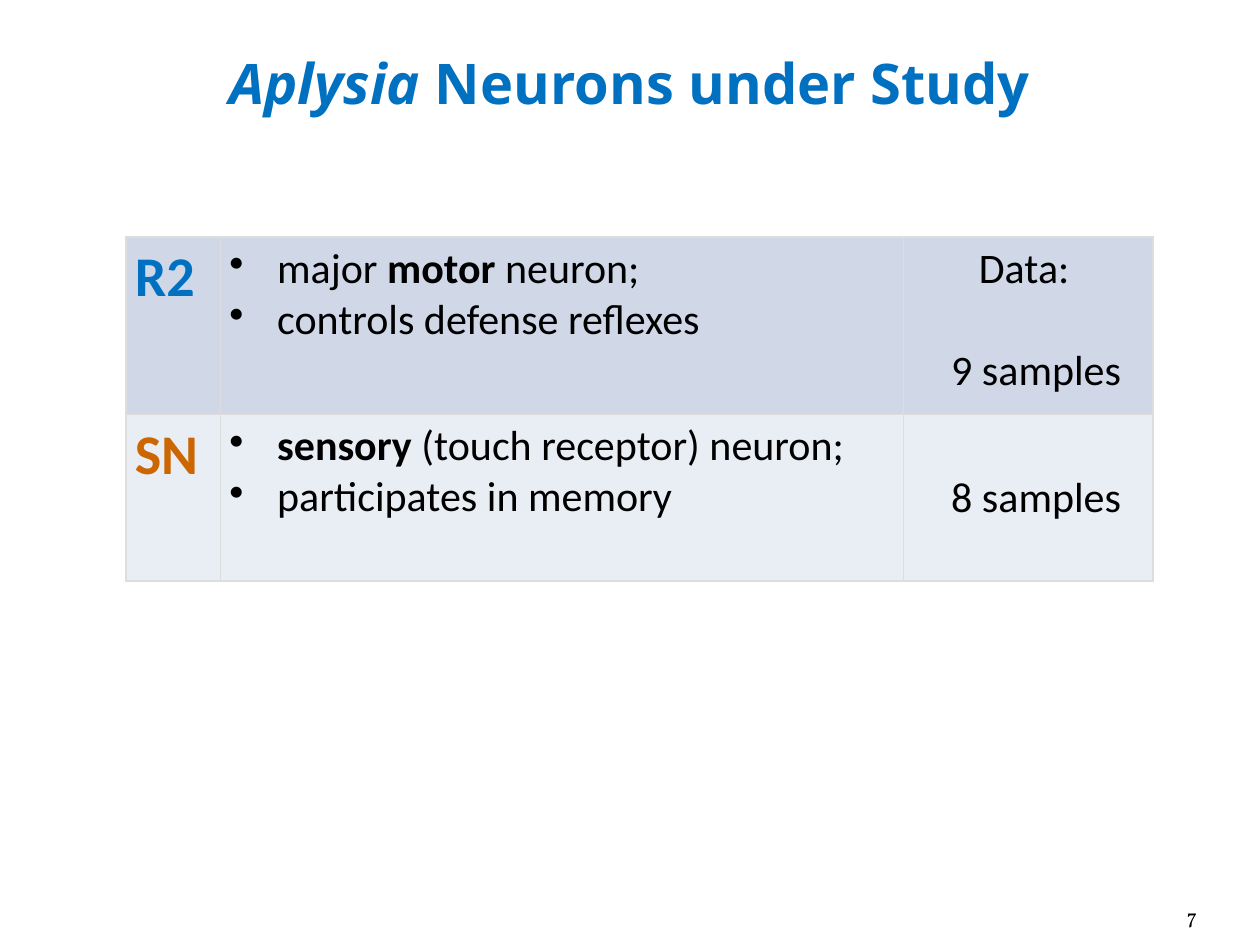
from dataclasses import dataclass

from lxml.etree import SubElement
from pptx import Presentation
from pptx.dml.color import RGBColor
from pptx.enum.text import MSO_ANCHOR as Anchor, PP_ALIGN as Align
from pptx.oxml.ns import qn
from pptx.util import Inches, Pt

BLUE, ORANGE, BLACK, BORDER = "0070C0", "CC6600", "000000", "DDDDDD"
LINE_HEIGHT = 0.41  # one line of 24 pt Calibri, in inches
HANGING = 0.38


@dataclass
class Span:
    text: str
    bold: bool = False
    italic: bool = False


@dataclass
class Line:
    spans: list[Span]
    indent: float = 0
    bullet: bool = False
    space_before: float = 0


@dataclass
class Neuron:
    name: str
    color: str
    fill: str
    height: float
    facts: list[Line]
    data: list[Line]
    data_top: float = 0.05


NEURONS = [
    Neuron("R2", BLUE, "D0D8E8", 1.41,
           [Line([Span("major "), Span("motor", bold=True), Span(" neuron;")], HANGING, True),
            Line([Span("controls defense reflexes")], HANGING, True)],
           [Line([Span("Data:")], 0.53),
            Line([Span("9 samples")], 0.31, space_before=LINE_HEIGHT)]),
    Neuron("SN", ORANGE, "E9EDF4", 1.32,
           [Line([Span("sensory", bold=True), Span(" (touch receptor) neuron;")], HANGING, True),
            Line([Span("participates in memory")], HANGING, True)],
           [Line([Span("8 samples")], 0.31)],
           data_top=0.05 + LINE_HEIGHT),
]
COLUMN_WIDTHS = [0.75, 5.42, 1.98]


def rgb(value: str) -> RGBColor:
    return RGBColor.from_string(value)


def write(frame, lines: list[Line], font: str, size: float, color: str, align=Align.LEFT) -> None:
    """Fill a text frame with lines in one font, size and colour."""
    for number, line in enumerate(lines):
        para = frame.add_paragraph() if number else frame.paragraphs[0]
        para.alignment = align
        para.font.name, para.font.size = font, Pt(size)
        para.font.color.rgb = rgb(color)
        if line.space_before:
            para.space_before = Inches(line.space_before)
        properties = para._p.get_or_add_pPr()
        if line.indent:
            properties.set("marL", str(Inches(line.indent)))
        if line.bullet:
            properties.set("indent", str(-Inches(line.indent)))
            bullet = SubElement(properties, qn("a:buChar"), char="•")
            properties.remove(bullet)
            properties.insert_element_before(bullet, "a:tabLst", "a:defRPr", "a:extLst")
        for span in line.spans:
            run = para.add_run()
            run.text = span.text
            run.font.bold, run.font.italic = span.bold, span.italic


def add_text(page, place: tuple, lines: list[Line], font: str, size: float, color: str,
             align, anchor, side_margin: float = 0.1) -> None:
    frame = page.shapes.add_textbox(*map(Inches, place)).text_frame
    frame.word_wrap = True
    frame.vertical_anchor = anchor
    frame.margin_left = frame.margin_right = Inches(side_margin)
    write(frame, lines, font, size, color, align)


def style_cell(cell, fill: str, top: float = 0.05) -> None:
    """Set margins, thin grey borders and fill."""
    cell.margin_left = cell.margin_right = Inches(0.07)
    cell.margin_top, cell.margin_bottom = Inches(top), Inches(0.05)
    properties = cell._tc.get_or_add_tcPr()
    for side in ("lnL", "lnR", "lnT", "lnB"):
        border = SubElement(properties, qn(f"a:{side}"), w=str(Pt(1)))
        solid = SubElement(border, qn("a:solidFill"))
        SubElement(solid, qn("a:srgbClr"), val=BORDER)
    cell.fill.solid()
    cell.fill.fore_color.rgb = rgb(fill)


def add_neuron_table(page) -> None:
    heights = [neuron.height for neuron in NEURONS]
    table = page.shapes.add_table(
        len(NEURONS), len(COLUMN_WIDTHS), Inches(1), Inches(1.88),
        Inches(sum(COLUMN_WIDTHS)), Inches(sum(heights))).table
    table.first_row = table.horz_banding = False
    for column, width in zip(table.columns, COLUMN_WIDTHS):
        column.width = Inches(width)
    for row, neuron in zip(table.rows, NEURONS):
        row.height = Inches(neuron.height)
        name, facts, data = row.cells
        style_cell(name, neuron.fill)
        style_cell(facts, neuron.fill)
        style_cell(data, neuron.fill, neuron.data_top)
        write(name.text_frame, [Line([Span(neuron.name, bold=True)])], "Calibri", 32, neuron.color)
        write(facts.text_frame, neuron.facts, "Calibri", 24, BLACK)
        write(data.text_frame, neuron.data, "Calibri", 24, BLACK)


def main() -> None:
    deck = Presentation()
    deck.slide_width, deck.slide_height = Inches(10), Inches(7.5)
    page = deck.slides.add_slide(deck.slide_layouts[6])

    # Title
    title = Line([Span("Aplysia ", bold=True, italic=True), Span("Neurons under Study", bold=True)])
    add_text(page, (0.5, 0.3, 9, 0.7), [title], "Noto Sans", 32, BLUE, Align.CENTER, Anchor.MIDDLE)

    # Neurons and their samples
    add_neuron_table(page)

    # Page number
    add_text(page, (8.67, 7.02, 0.83, 0.4), [Line([Span("7")])], "Vollkorn", 12, BLACK,
             Align.RIGHT, Anchor.BOTTOM, side_margin=0)

    deck.save("out.pptx")


if __name__ == "__main__":
    main()
